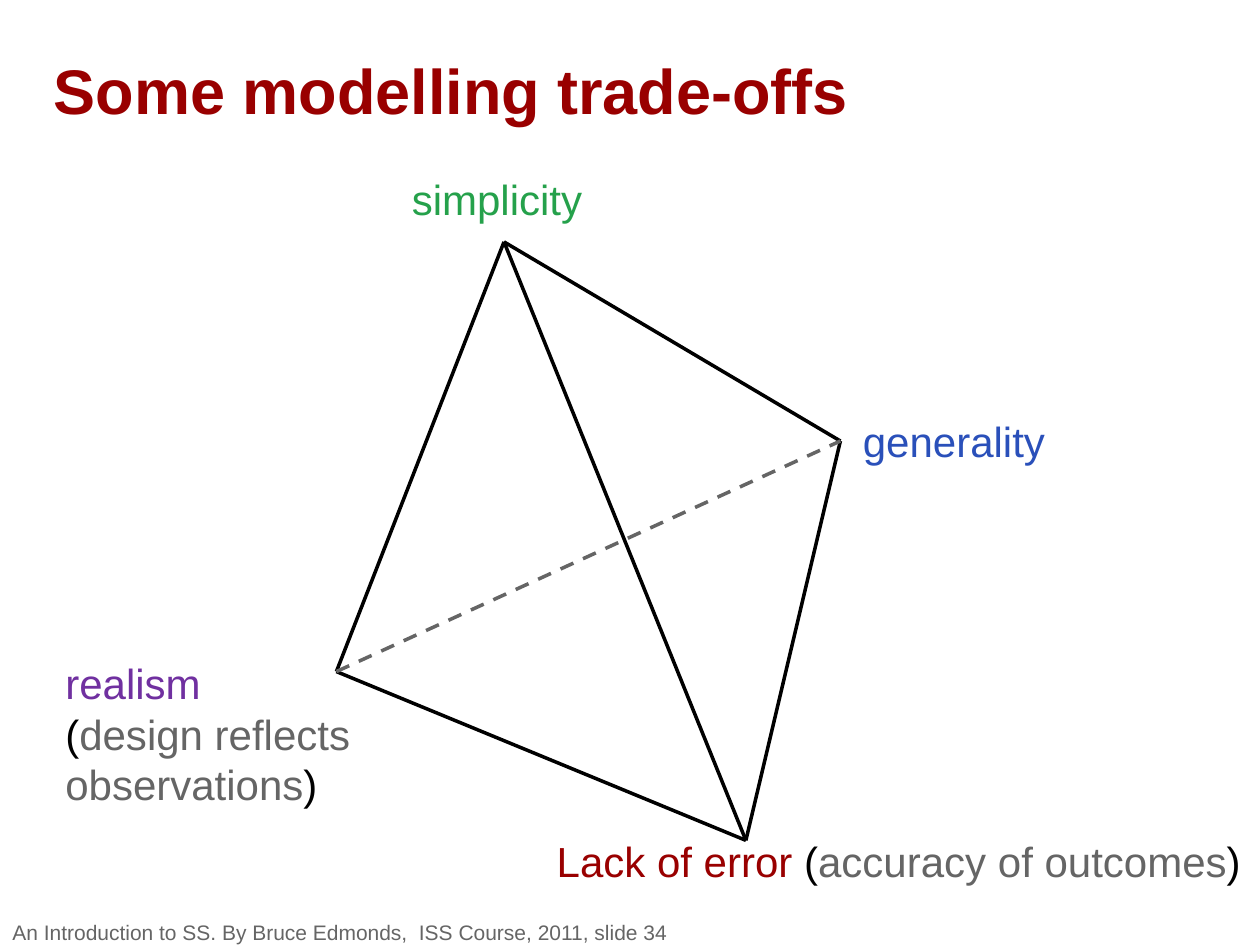
import pptx
import pptx.util
import pptx.dml.color
import pptx.enum.dml
import pptx.enum.shapes
import pptx.enum.text
import pptx.oxml.ns
import lxml.etree

Inches = pptx.util.Inches
Pt = pptx.util.Pt
ANCHOR = pptx.enum.text.MSO_ANCHOR

COLORS = {
    "black": "000000",
    "grey": "656565",
    "red": "990000",
    "green": "25A14B",
    "blue": "2A50BA",
    "purple": "7030A0",
}


class Deck:
    """Holds the style and the current slide, and draws its elements."""

    font = "Arial"
    line_width = 2

    def __init__(self, width, height):
        self.prs = pptx.Presentation()
        self.prs.slide_width = Inches(width)
        self.prs.slide_height = Inches(height)
        self.s = self.prs.slides.add_slide(self.prs.slide_layouts[6])

    def color(self, name):
        return pptx.dml.color.RGBColor.from_string(COLORS[name])

    def text(self, box, runs, size=24, bold=False, wrap=True, anchor=ANCHOR.TOP, grow=False):
        tf = self.s.shapes.add_textbox(*map(Inches, box)).text_frame
        tf.word_wrap = wrap
        tf.vertical_anchor = anchor
        if grow:
            tf.auto_size = pptx.enum.text.MSO_AUTO_SIZE.SHAPE_TO_FIT_TEXT
        p = tf.paragraphs[0]
        p.font.name = self.font
        p.font.size = Pt(size)
        p.font.bold = bold
        for words, color in runs:
            if words == "\n":
                p.add_line_break()
                continue
            r = p.add_run()
            r.text = words
            r.font.color.rgb = self.color(color)

    def label(self, box, runs, wrap=False):
        self.text(box, runs, wrap=wrap, grow=True)

    def edge(self, group, start, end, color="black", dash=None):
        line = group.shapes.add_connector(
            pptx.enum.shapes.MSO_CONNECTOR.STRAIGHT, *map(Inches, start + end))
        line.line.color.rgb = self.color(color)
        line.line.width = Pt(self.line_width)
        if dash:
            line.line.dash_style = dash
        lxml.etree.SubElement(line._element.spPr, pptx.oxml.ns.qn("a:effectLst"))


def main():
    deck = Deck(10, 7.5)
    deck.text((0.33, 0.25, 8.42, 0.92), [("Some modelling trade-offs", "red")],
              size=36, bold=True, anchor=ANCHOR.MIDDLE)

    simplicity, generality = (4, 1.92), (6.67, 3.5)
    realism, accuracy = (2.67, 5.33), (5.92, 6.67)
    tetrahedron = deck.s.shapes.add_group_shape()
    for start, end in [
        (simplicity, accuracy),
        (accuracy, generality),
        (simplicity, generality),
        (simplicity, realism),
        (realism, accuracy),
    ]:
        deck.edge(tetrahedron, start, end)
    deck.edge(tetrahedron, realism, generality, "grey", pptx.enum.dml.MSO_LINE.DASH)

    deck.label((3.17, 1.33, 1.56, 0.5), [("simplicity", "green")])
    deck.label((6.75, 3.25, 1.65, 0.5), [("generality", "blue")])
    deck.label((4.32, 6.58, 5.68, 0.5), [
        ("Lack of error", "red"), (" (", "black"),
        ("accuracy of outcomes", "grey"), (")", "black")])
    deck.label((0.42, 5.17, 2.75, 1.31), [
        ("realism", "purple"), ("\n", "purple"), ("(", "black"),
        ("design reflects observations", "grey"), (")", "black")], wrap=True)
    deck.text((0, 7.29, 10, 0.21),
              [("An Introduction to SS. By Bruce Edmonds,  ISS Course, 2011, slide 34", "grey")],
              size=12, anchor=ANCHOR.MIDDLE)

    deck.prs.save("out.pptx")


if __name__ == "__main__":
    main()
